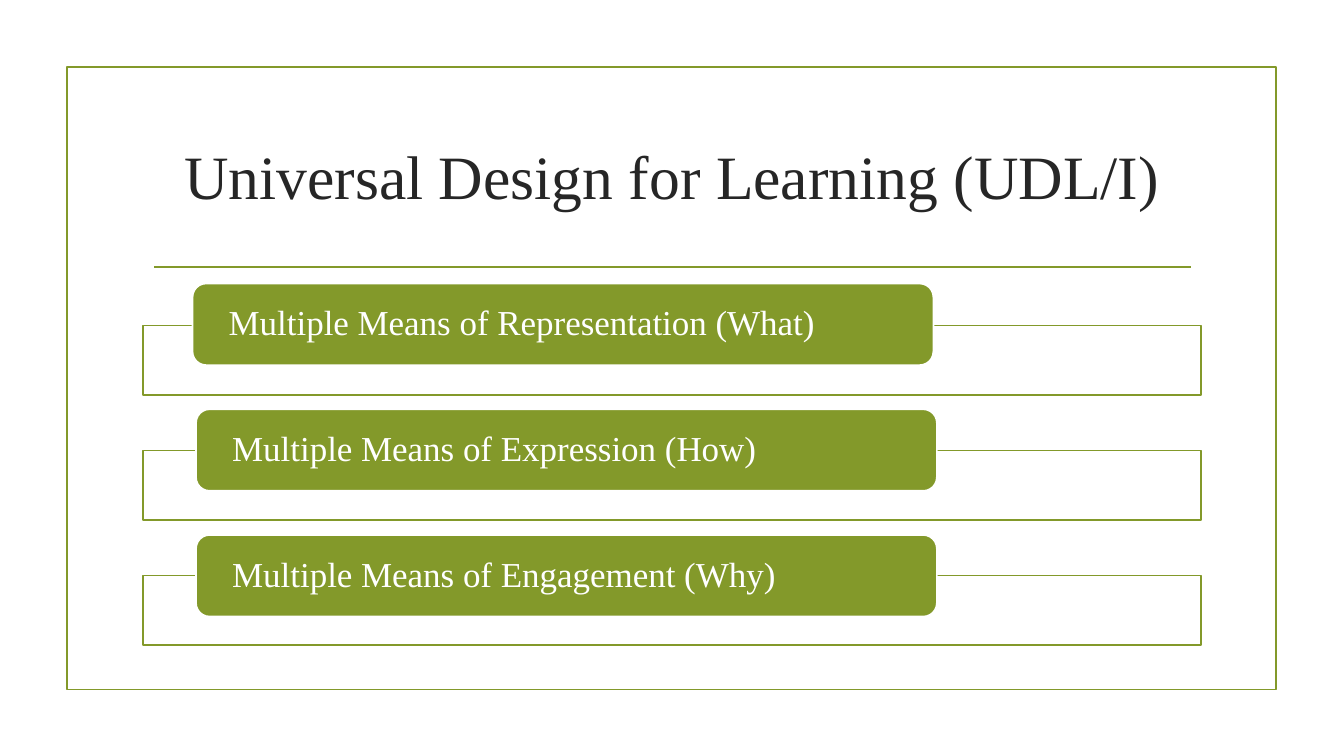
"""Build the Universal Design for Learning slide."""
from dataclasses import dataclass

from lxml import etree
from pptx import Presentation
from pptx.dml.color import RGBColor
from pptx.enum.shapes import MSO_CONNECTOR, MSO_SHAPE
from pptx.enum.text import MSO_ANCHOR, PP_ALIGN
from pptx.oxml.ns import qn
from pptx.util import Pt

RECT, ROUND = MSO_SHAPE.RECTANGLE, MSO_SHAPE.ROUNDED_RECTANGLE
STRAIGHT = MSO_CONNECTOR.STRAIGHT
MIDDLE = MSO_ANCHOR.MIDDLE
LEFT, CENTER = PP_ALIGN.LEFT, PP_ALIGN.CENTER


@dataclass(frozen=True)
class Theme:
    """Colours, font and sizes of the slide."""
    green: str = "83992A"
    white: str = "FFFFFF"
    dark: str = "262626"
    font: str = "Times New Roman"
    title: float = 44
    label: float = 25
    line: float = 1.25


class Deck:
    """Holds the theme and current slide and draws each kind of element."""

    def __init__(self, prs, theme):
        self.theme = theme
        self.s = prs.slides.add_slide(prs.slide_layouts[5])

    def stroke(self, line, color):
        """Give a line its colour and width."""
        line.color.rgb = RGBColor.from_string(color)
        line.width = Pt(self.theme.line)

    def box(self, kind, at, line, fill=None):
        """Add a preset shape."""
        sp = self.s.shapes.add_shape(kind, *map(Pt, at))
        sp.shadow.inherit = False
        if fill:
            sp.fill.solid()
            sp.fill.fore_color.rgb = RGBColor.from_string(fill)
        else:
            sp.fill.background()
        self.stroke(sp.line, line)
        return sp

    def rule(self, x1, x2, y):
        """Add a horizontal line."""
        sp = self.s.shapes.add_connector(STRAIGHT, Pt(x1), Pt(y), Pt(x2), Pt(y))
        etree.SubElement(sp._element.spPr, qn("a:effectLst"))
        self.stroke(sp.line, self.theme.green)

    def text(self, sp, text, size, color, align, inset):
        """Write one formatted paragraph into a shape."""
        tf = sp.text_frame
        frame = {"word_wrap": True, "vertical_anchor": MIDDLE,
                 "margin_left": Pt(inset), "margin_right": Pt(inset),
                 "margin_top": 0, "margin_bottom": 0}
        for name, value in frame.items():
            setattr(tf, name, value)
        p = tf.paragraphs[0]
        p.alignment, p.line_spacing = align, 0.9
        r = p.add_run()
        r.text = text
        for name, value in {"size": Pt(size), "name": self.theme.font}.items():
            setattr(r.font, name, value)
        r.font.color.rgb = RGBColor.from_string(color)

    def title(self, text, at):
        """Place and fill the title placeholder."""
        sp = self.s.shapes.title
        for name, value in zip(("left", "top", "width", "height"), at):
            setattr(sp, name, Pt(value))
        self.text(sp, text, self.theme.title, self.theme.dark, CENTER, 7.2)

    def principle(self, text, x, box_y, label_y):
        """Add an outlined box with a rounded label over its top edge."""
        t = self.theme
        self.box(RECT, (102.2, box_y, 756, 49.7), t.green, t.white)
        sp = self.box(ROUND, (x, label_y, 529.2, 58.3), t.white, t.green)
        self.text(sp, text, t.label, t.white, LEFT, 23)


def main():
    """Build and save the slide."""
    prs = Presentation()
    prs.slide_width, prs.slide_height = Pt(960), Pt(540)
    theme = Theme()
    deck = Deck(prs, theme)
    deck.box(RECT, (47.7, 48, 864, 444.5), theme.green)
    deck.rule(110.2, 850.4, 190.8)
    deck.title("Universal Design for Learning (UDL/I)", (102.2, 77, 756, 103))
    principles = [("Multiple Means of Representation (What)", 137.5),
                  ("Multiple Means of Expression (How)", 140),
                  ("Multiple Means of Engagement (Why)", 140)]
    for i, (text, x) in enumerate(principles):
        deck.principle(text, x, 232.4 + 89.3 * i, 202.5 + 89.8 * i)
    prs.save("out.pptx")


if __name__ == "__main__":
    main()
